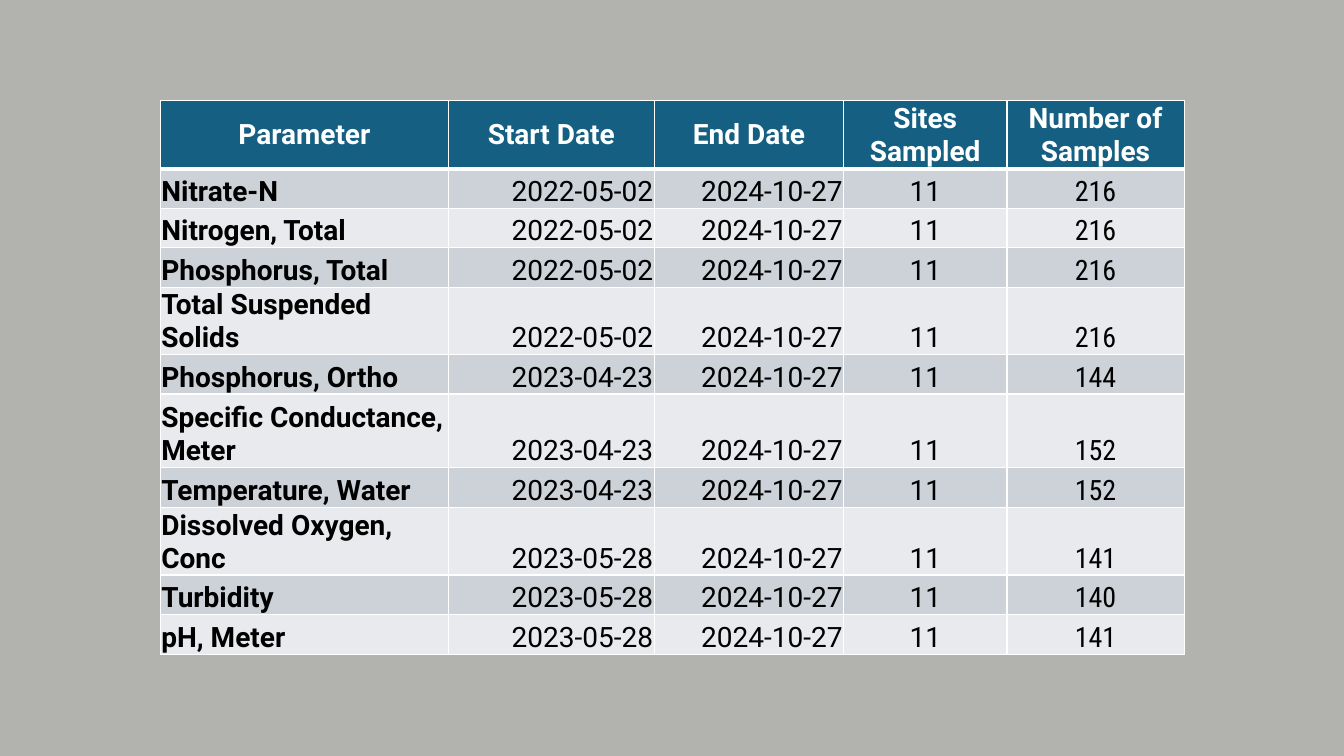
from lxml import etree
from pptx import Presentation
from pptx.dml.color import RGBColor
from pptx.enum.text import MSO_ANCHOR, PP_ALIGN
from pptx.oxml.ns import qn
from pptx.util import Pt

LEFT, MID, RIGHT = PP_ALIGN.LEFT, PP_ALIGN.CENTER, PP_ALIGN.RIGHT
MIDDLE, BOTTOM = MSO_ANCHOR.MIDDLE, MSO_ANCHOR.BOTTOM

COLORS = {
    "back": "B2B2AE",
    "head": "156082",
    "odd": "CCD2D8",
    "even": "E8EAED",
    "white": "FFFFFF",
    "black": "000000",
}
FONT, SLIM = "Roboto", "Roboto Condensed"

HEADS = ["Parameter", "Start Date", "End Date", "Sites Sampled", "Number of Samples"]
WIDTHS = [205.9, 146.9, 135.4, 116.6, 126.7]
ALIGNS = [LEFT, RIGHT, RIGHT, MID, MID]
END, SITES = "2024-10-27", "11"
HEAD_H, ROW_H = 48.5, 28.3

# Parameter, start date, number of samples, row height
ROWS = [
    ("Nitrate-N", "2022-05-02", "216", ROW_H),
    ("Nitrogen, Total", "2022-05-02", "216", ROW_H),
    ("Phosphorus, Total", "2022-05-02", "216", ROW_H),
    ("Total Suspended Solids", "2022-05-02", "216", 47.5),
    ("Phosphorus, Ortho", "2023-04-23", "144", ROW_H),
    ("Specific Conductance, Meter", "2023-04-23", "152", 52.5),
    ("Temperature, Water", "2023-04-23", "152", ROW_H),
    ("Dissolved Oxygen, Conc", "2023-05-28", "141", 48.5),
    ("Turbidity", "2023-05-28", "140", ROW_H),
    ("pH, Meter", "2023-05-28", "141", ROW_H),
]


def rgb(name):
    return RGBColor.from_string(COLORS[name])


def add_edges(cell, top, bottom):
    """Draw white borders; top and bottom are widths in points."""
    props = cell._tc.get_or_add_tcPr()
    for side, width in (("L", 1), ("R", 1), ("T", top), ("B", bottom)):
        line = etree.SubElement(props, qn("a:ln" + side), w=str(Pt(width)))
        fill = etree.SubElement(line, qn("a:solidFill"))
        etree.SubElement(fill, qn("a:srgbClr"), val=COLORS["white"])


def set_cell(cell, text, fill, color, align, anchor, bold=False, font=FONT):
    cell.fill.solid()
    cell.fill.fore_color.rgb = rgb(fill)
    cell.margin_left = cell.margin_right = cell.margin_top = Pt(0.75)
    cell.margin_bottom = Pt(0)
    cell.vertical_anchor = anchor
    cell.text_frame.text = text
    para = cell.text_frame.paragraphs[0]
    para.alignment = align
    face = para.runs[0].font
    face.name, face.size, face.bold = font, Pt(20), bold
    face.color.rgb = rgb(color)


def add_grid(slide):
    heights = [HEAD_H] + [row[-1] for row in ROWS]
    frame = slide.shapes.add_table(
        len(heights), len(WIDTHS), Pt(114.5), Pt(72), Pt(sum(WIDTHS)), Pt(sum(heights))
    )
    table = frame.table
    for col, width in zip(table.columns, WIDTHS):
        col.width = Pt(width)
    for row, height in zip(table.rows, heights):
        row.height = Pt(height)

    # Header row
    for c, text in enumerate(HEADS):
        cell = table.cell(0, c)
        add_edges(cell, 1, 3)
        set_cell(cell, text, "head", "white", MID, MIDDLE, bold=True)

    # Data rows in two bands
    for r, (name, start, count, _) in enumerate(ROWS, 1):
        band = "odd" if r % 2 else "even"
        for c, text in enumerate([name, start, END, SITES, count]):
            cell = table.cell(r, c)
            add_edges(cell, 3 if r == 1 else 1, 1)
            font = SLIM if c == len(HEADS) - 1 else FONT
            set_cell(cell, text, band, "black", ALIGNS[c], BOTTOM, c == 0, font)


def main():
    deck = Presentation()
    deck.slide_width, deck.slide_height = Pt(960), Pt(540)
    slide = deck.slides.add_slide(deck.slide_layouts[6])
    back = slide.background.fill
    back.solid()
    back.fore_color.rgb = rgb("back")
    add_grid(slide)
    deck.save("out.pptx")


if __name__ == "__main__":
    main()
